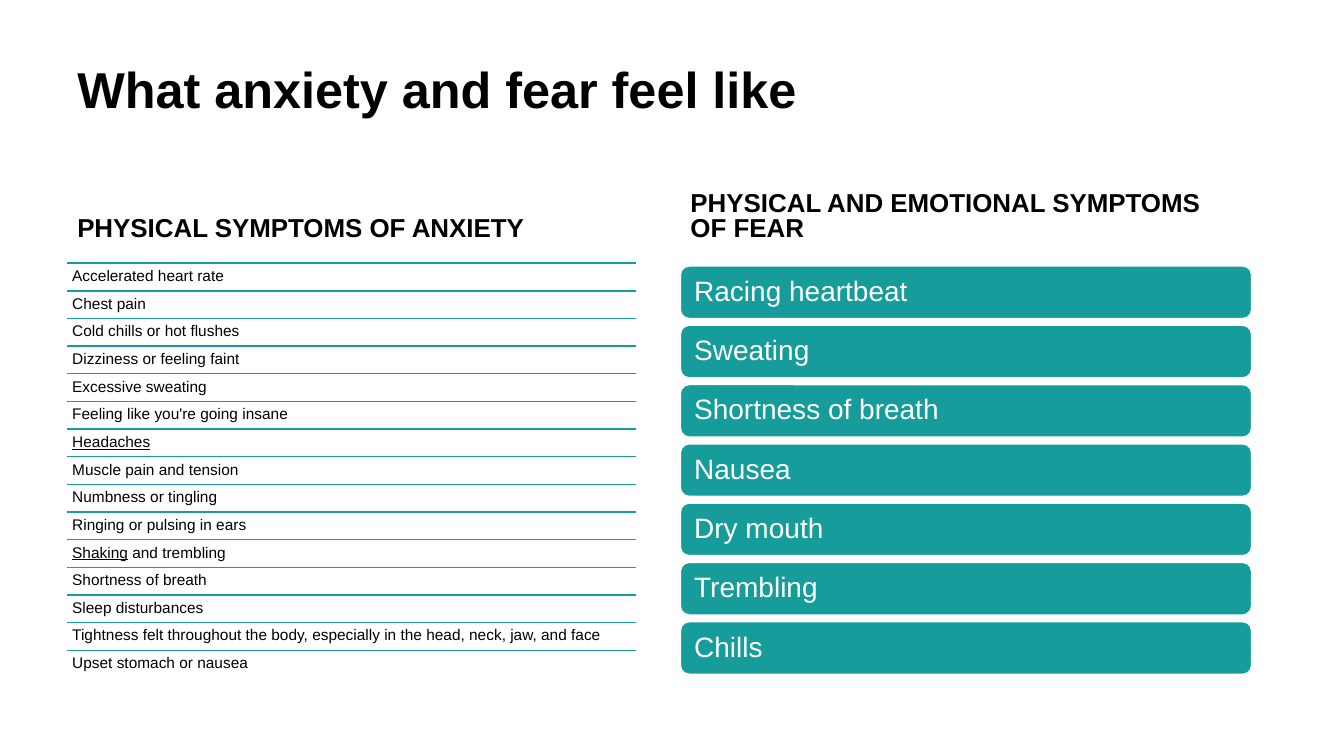
from dataclasses import dataclass

from lxml.etree import SubElement as add_node
from pptx import Presentation as Deck
from pptx.dml.color import RGBColor as Color
from pptx.enum.shapes import MSO_CONNECTOR as Link, MSO_SHAPE as Form
from pptx.enum.text import MSO_ANCHOR as Anchor, MSO_AUTO_SIZE as Fit, PP_ALIGN as Align
from pptx.oxml.ns import qn
from pptx.slide import Slide
from pptx.text.text import TextFrame as Frame
from pptx.util import Pt


@dataclass(frozen=True)
class Theme:
    font: str = "Arial"
    ink: Color = Color(0, 0, 0)
    teal: Color = Color(0x16, 0x9C, 0x9A)
    white: Color = Color(255, 255, 255)
    title: float = 36
    head: float = 18.5
    row: float = 11
    card: float = 20


@dataclass(frozen=True)
class Box:
    left: float
    top: float
    width: float
    height: float

    def down(self, step: float) -> "Box":
        return Box(self.left, self.top + step, self.width, self.height)

    def points(self) -> tuple[Pt, Pt, Pt, Pt]:
        return Pt(self.left), Pt(self.top), Pt(self.width), Pt(self.height)


@dataclass(frozen=True)
class Part:
    text: str
    under: bool = False


@dataclass(frozen=True)
class Style:
    size: float
    color: Color
    anchor: Anchor
    inset: tuple[float, float]
    bold: bool = False
    space: float = 0.9
    before: float = 0


@dataclass(frozen=True)
class Head:
    index: int
    box: Box
    style: Style
    text: str


THEME = Theme()
TITLE = Style(THEME.title, THEME.ink, Anchor.TOP, (7.2, 3.6), bold=True)
HEAD = Style(THEME.head, THEME.ink, Anchor.BOTTOM, (7.2, 3.6), bold=True, space=0.8, before=10)
ROW = Style(THEME.row, THEME.ink, Anchor.TOP, (3.6, 3.6))
CARD = Style(THEME.card, THEME.white, Anchor.MIDDLE, (8, 6))

HEADS = (
    Head(0, Box(48, 43, 846, 90), TITLE, "What anxiety and fear feel like"),
    Head(1, Box(48, 132.5, 406, 44), HEAD, "PHYSICAL SYMPTOMS OF ANXIETY"),
    Head(3, Box(486, 132.5, 408, 44), HEAD, "PHYSICAL AND EMOTIONAL SYMPTOMS OF FEAR"),
)
ROWS = (
    (Part("Accelerated heart rate"),),
    (Part("Chest pain"),),
    (Part("Cold chills or hot flushes"),),
    (Part("Dizziness or feeling faint"),),
    (Part("Excessive sweating"),),
    (Part("Feeling like you're going insane"),),
    (Part("Headaches", under=True),),
    (Part("Muscle pain and tension"),),
    (Part("Numbness or tingling"),),
    (Part("Ringing or pulsing in ears"),),
    (Part("Shaking", under=True), Part(" and trembling")),
    (Part("Shortness of breath"),),
    (Part("Sleep disturbances"),),
    (Part("Tightness felt throughout the body, especially in the head, neck, jaw, and face"),),
    (Part("Upset stomach or nausea"),),
)
CARDS = ("Racing heartbeat", "Sweating", "Shortness of breath", "Nausea",
         "Dry mouth", "Trembling", "Chills")
ROW_BOX, ROW_STEP = Box(48, 188, 406, 19.75), 19.75
CARD_BOX, CARD_STEP = Box(486, 190, 408, 37.5), 42.35


def write(frame: Frame, style: Style, parts: tuple[Part, ...]) -> None:
    frame.word_wrap = True
    frame.auto_size = Fit.NONE
    frame.vertical_anchor = style.anchor
    side, edge = style.inset
    frame.margin_left = frame.margin_right = Pt(side)
    frame.margin_top = frame.margin_bottom = Pt(edge)
    para = frame.paragraphs[0]
    para.alignment = Align.LEFT
    para.line_spacing = style.space
    para.space_before = Pt(style.before)
    for part in parts:
        run = para.add_run()
        run.text = part.text
        font = run.font
        font.name = THEME.font
        font.size = Pt(style.size)
        font.bold = style.bold
        font.underline = part.under
        font.color.rgb = style.color


def draw_head(slide: Slide, head: Head) -> None:
    holder = slide.placeholders[head.index]
    holder.left, holder.top, holder.width, holder.height = head.box.points()
    write(holder.text_frame, head.style, (Part(head.text),))


def draw_row(slide: Slide, box: Box, parts: tuple[Part, ...]) -> None:
    left, top, width, height = box.points()
    rule = slide.shapes.add_connector(Link.STRAIGHT, left, top, left + width, top)
    rule.line.color.rgb = THEME.teal
    rule.line.width = Pt(1)
    add_node(rule._element.spPr, qn("a:effectLst"))
    label = slide.shapes.add_textbox(left, top, width, height)
    write(label.text_frame, ROW, parts)


def draw_card(slide: Slide, box: Box, text: str) -> None:
    card = slide.shapes.add_shape(Form.ROUNDED_RECTANGLE, *box.points())
    card.shadow.inherit = False
    card.fill.solid()
    card.fill.fore_color.rgb = THEME.teal
    card.line.color.rgb = THEME.white
    card.line.width = Pt(1)
    write(card.text_frame, CARD, (Part(text),))


def main() -> None:
    deck = Deck()
    deck.slide_width, deck.slide_height = Pt(960), Pt(540)
    slide = deck.slides.add_slide(deck.slide_layouts.get_by_name("Comparison"))
    used = {head.index for head in HEADS}
    for holder in list(slide.placeholders):
        if holder.placeholder_format.idx not in used:
            holder.element.getparent().remove(holder.element)
    for head in HEADS:
        draw_head(slide, head)
    for i, parts in enumerate(ROWS):
        draw_row(slide, ROW_BOX.down(i * ROW_STEP), parts)
    for i, text in enumerate(CARDS):
        draw_card(slide, CARD_BOX.down(i * CARD_STEP), text)
    deck.save("out.pptx")


if __name__ == "__main__":
    main()
